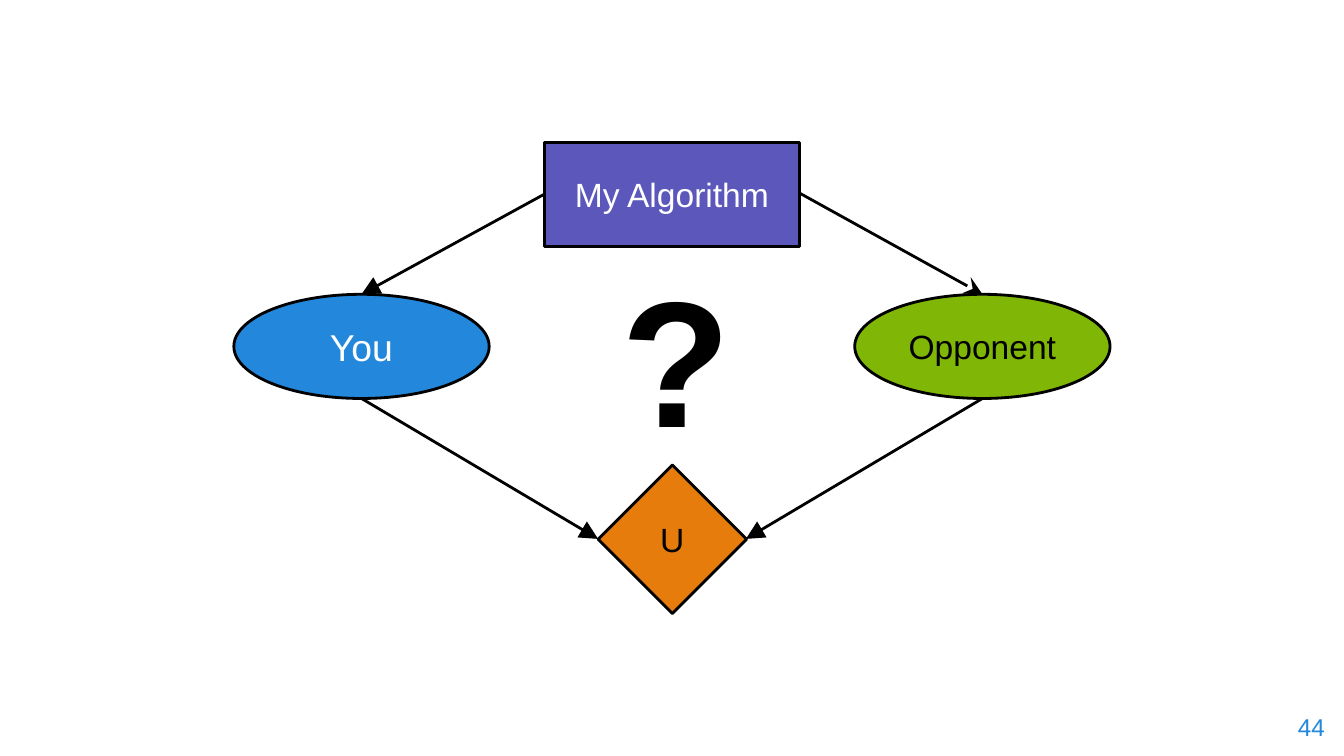
from typing import NamedTuple

from lxml import etree
from pptx import Presentation
from pptx.dml.color import RGBColor
from pptx.enum.shapes import MSO_CONNECTOR, MSO_SHAPE
from pptx.enum.text import MSO_ANCHOR, PP_ALIGN
from pptx.oxml.ns import qn
from pptx.util import Emu, Pt

PX = 4572  # 200 px to the inch
SLIDE_WIDTH, SLIDE_HEIGHT = 2000, 1125
INSET = 20
LINE_WIDTH = Pt(1.5)
BLANK_LAYOUT = 6
STRAIGHT = MSO_CONNECTOR.STRAIGHT
RECT, OVAL, DIAMOND = MSO_SHAPE.RECTANGLE, MSO_SHAPE.OVAL, MSO_SHAPE.DIAMOND
MIDDLE = MSO_ANCHOR.MIDDLE
CENTER, RIGHT = PP_ALIGN.CENTER, PP_ALIGN.RIGHT
BLACK, WHITE, BLUE = "000000", "FFFFFF", "2388DB"


class Box(NamedTuple):
    left: int
    top: int
    width: int
    height: int


class Node(NamedTuple):
    kind: int
    box: Box
    fill: str
    text: str
    color: str
    size: int = 18


class Arrow(NamedTuple):
    x1: int
    y1: int
    x2: int
    y2: int
    head: str = "triangle"


class Label(NamedTuple):
    box: Box
    text: str
    size: int
    color: str
    align: int = CENTER
    bold: bool = False


ARROWS = [
    Arrow(1144, 262, 1462, 438, "stealth"),
    Arrow(810, 289, 538, 438),
    Arrow(538, 593, 890, 802),
    Arrow(1462, 593, 1110, 802),
]
NODES = [
    Node(RECT, Box(810, 212, 380, 155), "5B57BB", "My Algorithm", WHITE),
    Node(OVAL, Box(348, 438, 380, 155), BLUE, "You", WHITE, 20),
    Node(OVAL, Box(1272, 438, 380, 155), "80B606", "Opponent", BLACK),
    Node(DIAMOND, Box(890, 692, 221, 221), "E67C0B", "U", BLACK),
]
LABELS = [
    Label(Box(816, 367, 380, 326), "?", 96, BLACK, bold=True),
    Label(Box(1871, 1039, 120, 86), "44", 13, BLUE, RIGHT),
]


def px(n: int) -> Emu:
    return Emu(n * PX)


def rgb(color: str) -> RGBColor:
    return RGBColor.from_string(color)


def write(sp, text: str, size: int, color: str, align: int = CENTER, bold: bool = False) -> None:
    tf = sp.text_frame
    tf.word_wrap = True
    tf.vertical_anchor = MIDDLE
    tf.margin_left = tf.margin_right = tf.margin_top = tf.margin_bottom = px(INSET)
    tf.text = text
    p = tf.paragraphs[0]
    p.alignment = align
    font = p.runs[0].font
    font.name, font.size, font.bold = "Arial", Pt(size), bold
    font.color.rgb = rgb(color)


def draw_outline(sp) -> None:
    sp.line.color.rgb = rgb(BLACK)
    sp.line.width = LINE_WIDTH


def draw_arrow(s, arrow: Arrow) -> None:
    ends = (px(n) for n in arrow[:4])
    sp = s.shapes.add_connector(STRAIGHT, *ends)
    draw_outline(sp)
    ln = sp._element.spPr.find(qn("a:ln"))
    etree.SubElement(ln, qn("a:tailEnd"), type=arrow.head, w="lg", len="lg")
    etree.SubElement(sp._element.spPr, qn("a:effectLst"))


def draw_node(s, node: Node) -> None:
    sp = s.shapes.add_shape(node.kind, *map(px, node.box))
    sp.shadow.inherit = False
    sp.fill.solid()
    sp.fill.fore_color.rgb = rgb(node.fill)
    draw_outline(sp)
    write(sp, node.text, node.size, node.color)


def draw_label(s, label: Label) -> None:
    sp = s.shapes.add_textbox(*map(px, label.box))
    write(sp, label.text, label.size, label.color, label.align, label.bold)


def main() -> None:
    prs = Presentation()
    prs.slide_width, prs.slide_height = px(SLIDE_WIDTH), px(SLIDE_HEIGHT)
    s = prs.slides.add_slide(prs.slide_layouts[BLANK_LAYOUT])
    for arrow in ARROWS:
        draw_arrow(s, arrow)
    for node in NODES:
        draw_node(s, node)
    for label in LABELS:
        draw_label(s, label)
    prs.save("out.pptx")


if __name__ == "__main__":
    main()
